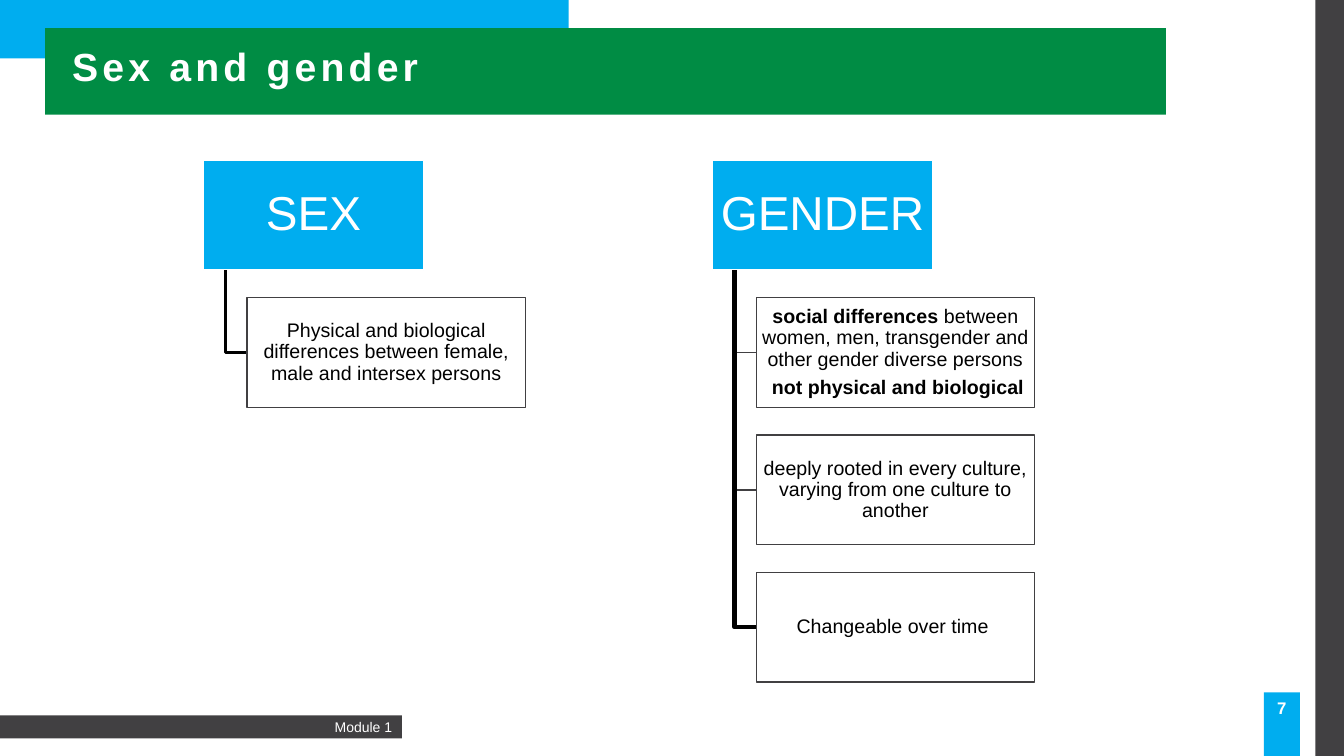
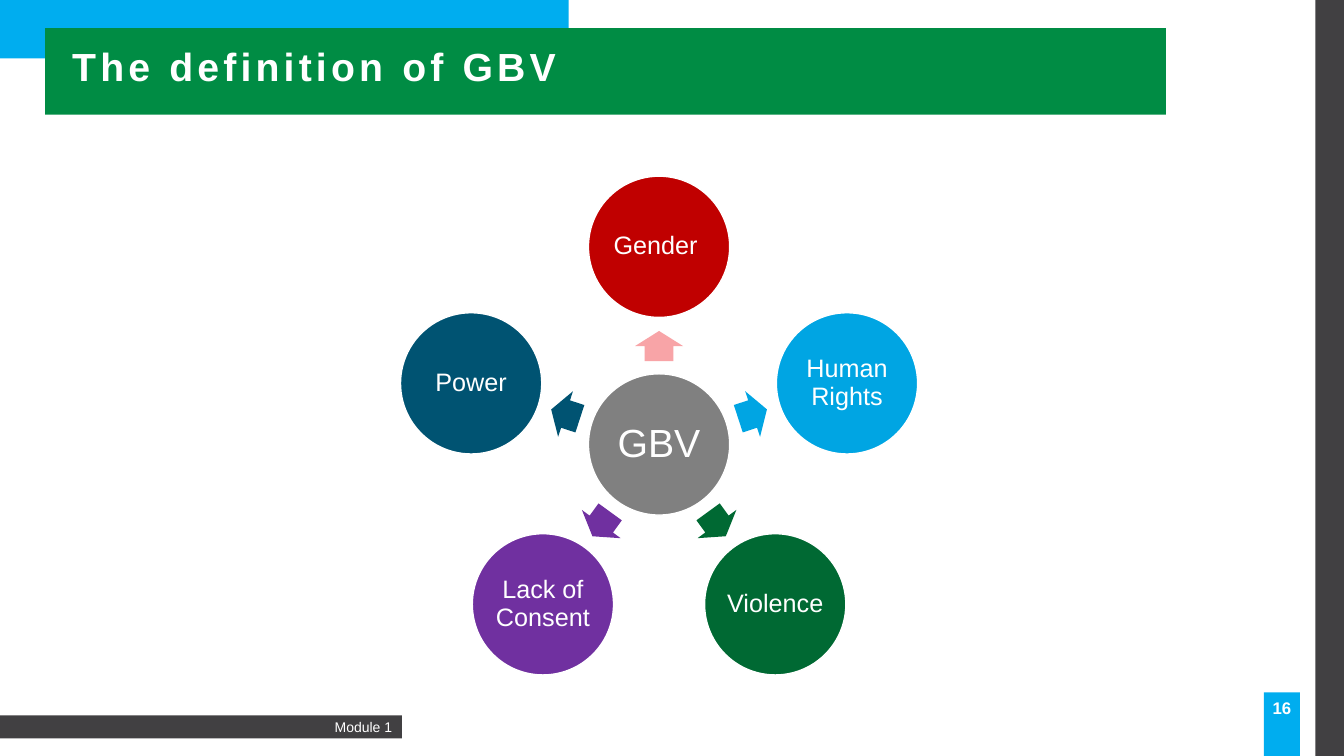
import math

from pptx import Presentation
from pptx.dml.color import RGBColor
from pptx.enum import shapes, text
from pptx.oxml.ns import qn
from pptx.util import Cm, Pt

FONT = "Arial"
WHITE, BLACK, DARK = "FFFFFF", "000000", "414042"
CYAN, GREEN, GREY = "00ADEF", "008C44", "808080"
RECT = shapes.MSO_SHAPE.RECTANGLE
OVAL = shapes.MSO_SHAPE.OVAL
ARROW = shapes.MSO_SHAPE.RIGHT_ARROW
LEFT, MID, RIGHT = text.PP_ALIGN.LEFT, text.PP_ALIGN.CENTER, text.PP_ALIGN.RIGHT
TOP, CENTER = text.MSO_ANCHOR.TOP, text.MSO_ANCHOR.MIDDLE

BANDS = [
    (0, 0, 14.33, 1.47, CYAN),
    (1.14, 0.71, 28.24, 2.18, GREEN),
    (33.15, 0, 0.72, 19.05, DARK),
]
TREES = [
    (5.13, "SEX", [
        ("Physical and biological differences between female, male and intersex persons",
         BLACK, 2.25),
    ]),
    (17.96, "GENDER", [
        ("*social differences *between women, men, transgender and other gender "
         "diverse persons\n* not physical and biological*", DARK, 1),
        ("deeply rooted in every culture, varying from one culture to another", DARK, 1),
        ("Changeable over time ", BLACK, 3),
    ]),
]
RING = [
    ("Gender ", "C00000", "F8A4A7"),
    ("Human Rights", "00A5E3", "00A5E3"),
    ("Violence", "006933", "006933"),
    ("Lack of Consent", "7030A0", "7030A0"),
    ("Power", "005372", "005372"),
]


def paint(part, color):
    """Give a fill or a font one solid colour."""
    if hasattr(part, "solid"):
        part.solid()
        part.fore_color.rgb = RGBColor.from_string(color)
    else:
        part.color.rgb = RGBColor.from_string(color)


def block(slide, kind, box, fill, line=None):
    shape = slide.shapes.add_shape(kind, *map(Cm, box))
    shape.shadow.inherit = False
    paint(shape.fill, fill)
    if line:
        paint(shape.line.fill, line)
        shape.line.width = Pt(1)
    else:
        shape.line.fill.background()
    return shape


def write(shape, words, size, color=WHITE, align=MID, anchor=CENTER,
          pad=(0.1, 0.1), bold=False, space=0.9):
    """Fill a shape with lines of text; parts between asterisks are bold."""
    frame = shape.text_frame
    frame.word_wrap = True
    frame.auto_size = text.MSO_AUTO_SIZE.NONE
    frame.vertical_anchor = anchor
    frame.margin_left = frame.margin_right = Cm(pad[0])
    frame.margin_top = frame.margin_bottom = Cm(pad[1])
    lines = words.split("\n")
    for row, line in enumerate(lines):
        para = frame.add_paragraph() if row else frame.paragraphs[0]
        para.alignment = align
        para.line_spacing = space
        if row < len(lines) - 1:
            para.space_after = Pt(size * 0.35)
        for part, bit in enumerate(line.split("*")):
            if bit:
                run = para.add_run()
                run.text = bit
                run.font.name = FONT
                run.font.size = Pt(size)
                run.font.bold = bold or part % 2 == 1
                paint(run.font, color)


def elbow(slide, start, end, color, width):
    """Draw a line that runs down from start, then across to end."""
    (x, y), (right, low) = start, end
    pen = slide.shapes.build_freeform(Cm(x), Cm(y))
    pen.add_line_segments([(Cm(x), Cm(low)), (Cm(right), Cm(low))], close=False)
    line = pen.convert_to_shape()
    line.shadow.inherit = False
    line.fill.background()
    paint(line.line.fill, color)
    line.line.width = Pt(width)


def set_layout(deck, layout):
    """Put the bands and the title's place on the layout."""
    tree = layout.shapes.element
    title, *rest = layout.placeholders
    for holder in rest:
        tree.remove(holder.element)
    title.left, title.top, title.width, title.height = map(Cm, (1.57, 0.97, 23.04, 1.52))
    first = deck.slides.add_slide(layout)
    for spot, (*box, color) in enumerate(BANDS):
        band = block(first, RECT, box, color)
        tree.insert(2 + spot, band.element)
    return first


def frame_slide(slide, title, number):
    """Add the title, the footer and the page number."""
    head = slide.shapes.title
    write(head, title, 28, align=LEFT, pad=(0.25, 0.13), bold=True)
    for props in head.element.iter(qn("a:rPr")):
        props.set("spc", "300")
    foot = block(slide, RECT, (0, 18.03, 10.13, 0.58), DARK)
    write(foot, "Module 1", 10, align=RIGHT, pad=(0.25, 0), space=1)
    page = block(slide, RECT, (31.85, 17.45, 0.91, 1.6), CYAN)
    write(page, number, 12, anchor=TOP, pad=(0.1, 0.13), bold=True, space=1)


def draw_tree(slide, left, name, leaves):
    top, high, step = 4.04, 2.77, 3.46
    head = block(slide, RECT, (left, top, 5.54, high), CYAN, WHITE)
    write(head, name, 34, pad=(0.18, 0.13))
    side = left + 1.1
    for row, (words, color, width) in enumerate(leaves, 1):
        y = top + row * step
        elbow(slide, (left + 0.55, top + high), (side, y + high / 2), color, width)
        leaf = block(slide, RECT, (side, y, 7.01, high), WHITE, DARK)
        write(leaf, words, 14, BLACK, pad=(0.08, 0.05))


def around(angle, reach, wide, high):
    """Return the box centred at a distance from the hub."""
    x = 16.61 + reach * math.cos(math.radians(angle))
    y = 11.2 + reach * math.sin(math.radians(angle))
    return x - wide / 2, y - high / 2, wide, high


def draw_ring(slide):
    size = 3.56
    hub = block(slide, OVAL, around(0, 0, size, size), GREY, WHITE)
    write(hub, "GBV", 28, pad=(0, 0))
    for spot, (name, color, tint) in enumerate(RING):
        angle = spot * 360 / len(RING) - 90
        arrow = block(slide, ARROW, around(angle, 2.48, 0.76, 1.21), tint)
        arrow.adjustments[0] = 0.6
        arrow.adjustments[1] = 0.5
        arrow.rotation = angle % 360
        disc = block(slide, OVAL, around(angle, 4.98, size, size), color, WHITE)
        write(disc, name, 18, pad=(0, 0))


def main():
    deck = Presentation()
    deck.slide_width, deck.slide_height = Cm(33.87), Cm(19.05)
    layout = deck.slide_layouts[5]

    slide = set_layout(deck, layout)
    frame_slide(slide, "Sex and gender", "7")
    for tree in TREES:
        draw_tree(slide, *tree)

    slide = deck.slides.add_slide(layout)
    frame_slide(slide, "The definition of GBV", "16")
    draw_ring(slide)

    deck.save("out.pptx")


if __name__ == "__main__":
    main()
